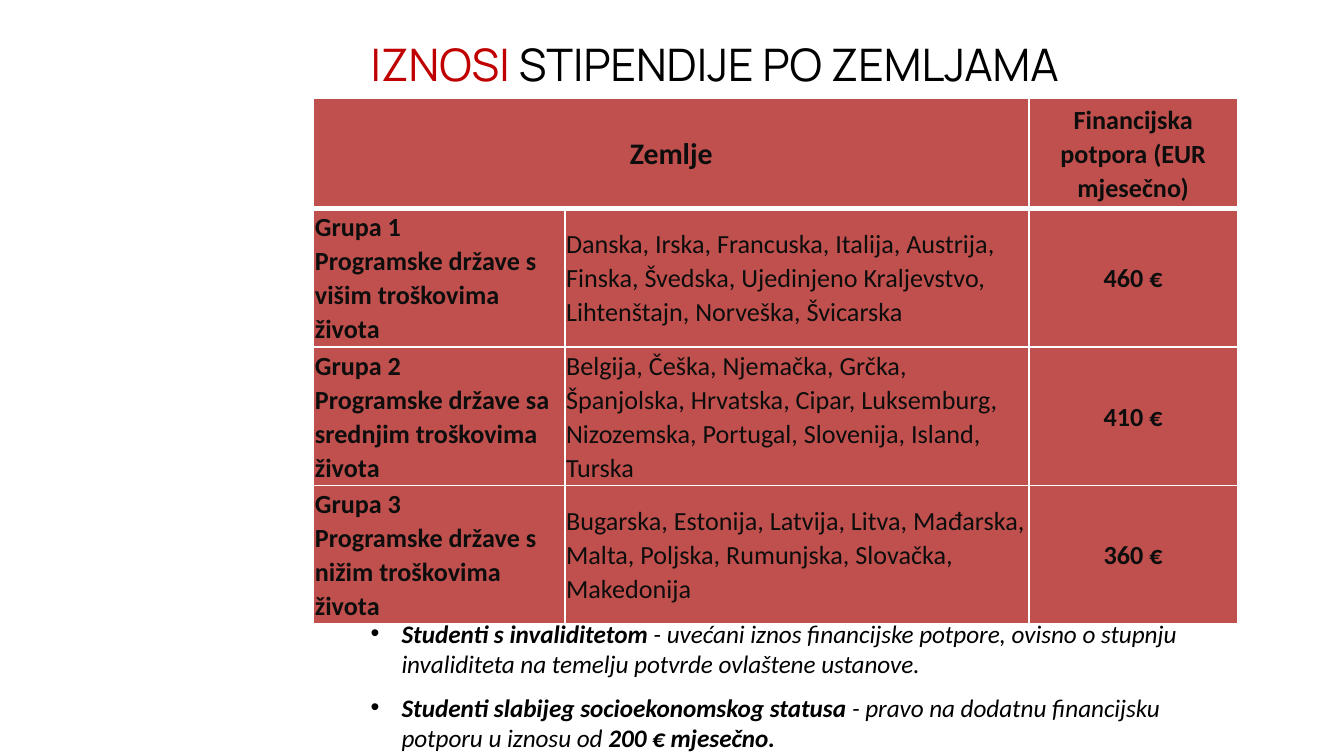
from dataclasses import dataclass

from lxml.etree import SubElement
from pptx import Presentation
from pptx.dml.color import RGBColor as Color
from pptx.enum.text import MSO_ANCHOR as Anchor, PP_ALIGN as Align
from pptx.oxml import parse_xml
from pptx.oxml.ns import nsdecls, qn
from pptx.util import Pt


@dataclass(frozen=True)
class Theme:
    black: str = "000000"
    ink: str = "0D0D0D"
    accent: str = "C00000"
    cell: str = "C0504D"
    border: str = "FFFFFF"
    title_font: str = "Manrope"
    body_font: str = "Calibri"
    title_size: float = 24
    heading_size: float = 16
    table_size: float = 14
    note_size: float = 13.5


THEME = Theme()

COLUMN_WIDTHS = (134.6, 248.6, 111.8)
ROW_HEIGHTS = (59, 63.5, 73.5, 73.5)
HEADERS = ("Zemlje", "Financijska potpora (EUR mjesečno)")
GROUPS = (
    (("Grupa 1", "Programske države s višim troškovima života"),
     "Danska, Irska, Francuska, Italija, Austrija, Finska, Švedska, "
     "Ujedinjeno Kraljevstvo, Lihtenštajn, Norveška, Švicarska",
     "460 €"),
    (("Grupa 2", "Programske države sa srednjim troškovima života"),
     "Belgija, Češka, Njemačka, Grčka, Španjolska, Hrvatska, Cipar, "
     "Luksemburg, Nizozemska, Portugal, Slovenija, Island, Turska",
     "410 €"),
    (("Grupa 3", "Programske države s nižim troškovima života"),
     "Bugarska, Estonija, Latvija, Litva, Mađarska, Malta, Poljska, "
     "Rumunjska, Slovačka, Makedonija",
     "360 €"),
)
# Each note is a list of (text, bold) spans.
NOTES = (
    (("Studenti s invaliditetom", True),
     (" - uvećani iznos financijske potpore, ovisno o stupnju invaliditeta "
      "na temelju potvrde ovlaštene ustanove.", False)),
    (("Studenti slabijeg socioekonomskog statusa", True),
     (" - pravo na dodatnu financijsku potporu u iznosu od ", False),
     ("200 € mjesečno.", True)),
)


def apply(target, values):
    for name, value in values.items():
        setattr(target, name, value)


class PageBuilder:
    def __init__(self, page, theme):
        self.page = page
        self.theme = theme

    def span(self, para, text, color, **values):
        span = para.add_run()
        span.text = text
        apply(span.font, values)
        span.font.color.rgb = Color.from_string(color)

    def text_box(self, left, top, width, height):
        box = self.page.shapes.add_textbox(Pt(left), Pt(top), Pt(width), Pt(height))
        box.text_frame.word_wrap = True
        return box.text_frame

    def title(self, spans, *place):
        para = self.text_box(*place).paragraphs[0]
        for text, color in spans:
            self.span(para, text, color, name=self.theme.title_font,
                      size=Pt(self.theme.title_size))

    def bullets(self, notes, *place, indent, gap):
        frame = self.text_box(*place)
        for index, note in enumerate(notes):
            para = frame.add_paragraph() if index else frame.paragraphs[0]
            props = para._p.get_or_add_pPr()
            props.set("marL", str(Pt(indent)))
            props.set("indent", str(-Pt(indent)))
            SubElement(props, qn("a:buFont"), typeface="Arial")
            SubElement(props, qn("a:buChar"), char="•")
            if index:
                para.space_before = Pt(gap)
            for text, bold in note:
                self.span(para, text, self.theme.black, name=self.theme.body_font,
                          size=Pt(self.theme.note_size), bold=bold, italic=True)

    def table(self, left, top, widths, heights):
        table = self.page.shapes.add_table(
            len(heights), len(widths), Pt(left), Pt(top),
            Pt(sum(widths)), Pt(sum(heights))).table
        for column, width in zip(table.columns, widths):
            column.width = Pt(width)
        for row, height in zip(table.rows, heights):
            row.height = Pt(height)
        for row_index in range(len(heights)):
            for column_index in range(len(widths)):
                self.cell_style(table.cell(row_index, column_index),
                                top=3 if row_index == 1 else 1,
                                bottom=1 if row_index else 3)
        return table

    def cell_style(self, cell, top, bottom):
        inset = Pt(0.7)
        apply(cell, {"margin_left": inset, "margin_right": inset,
                     "margin_top": inset, "margin_bottom": inset,
                     "vertical_anchor": Anchor.MIDDLE})
        cell.fill.solid()
        cell.fill.fore_color.rgb = Color.from_string(self.theme.cell)
        props = cell._tc.get_or_add_tcPr()
        edges = {"lnL": 1, "lnR": 1, "lnT": top, "lnB": bottom}
        for index, (edge, weight) in enumerate(edges.items()):
            props.insert(index, parse_xml(
                f'<a:{edge} {nsdecls("a")} w="{Pt(weight)}"><a:solidFill>'
                f'<a:srgbClr val="{self.theme.border}"/></a:solidFill></a:{edge}>'))

    def cell_text(self, cell, *lines, size=None, bold=True, align=Align.LEFT):
        frame = cell.text_frame
        for index, line in enumerate(lines):
            para = frame.add_paragraph() if index else frame.paragraphs[0]
            apply(para, {"alignment": align, "line_spacing": 1.07})
            self.span(para, line, self.theme.ink, name=self.theme.body_font,
                      size=Pt(size or self.theme.table_size), bold=bold)


def main():
    deck = Presentation()
    apply(deck, {"slide_width": Pt(720), "slide_height": Pt(405)})
    builder = PageBuilder(deck.slides.add_slide(deck.slide_layouts[6]), THEME)

    table = builder.table(168, 52.5, COLUMN_WIDTHS, ROW_HEIGHTS)
    table.cell(0, 0).merge(table.cell(0, 1))
    countries, support = HEADERS
    builder.cell_text(table.cell(0, 0), countries,
                      size=THEME.heading_size, align=Align.CENTER)
    builder.cell_text(table.cell(0, 2), support, align=Align.CENTER)
    for row, (group, members, amount) in enumerate(GROUPS, start=1):
        builder.cell_text(table.cell(row, 0), *group)
        builder.cell_text(table.cell(row, 1), members, bold=False)
        builder.cell_text(table.cell(row, 2), amount, align=Align.CENTER)

    builder.title((("IZNOSI ", THEME.accent), ("STIPENDIJE PO ZEMLJAMA", THEME.black)),
                  191.5, 16, 468, 36)
    builder.bullets(NOTES, 191.5, 327.5, 449.5, 80, indent=16.5, gap=7.3)
    deck.save("out.pptx")


if __name__ == "__main__":
    main()
